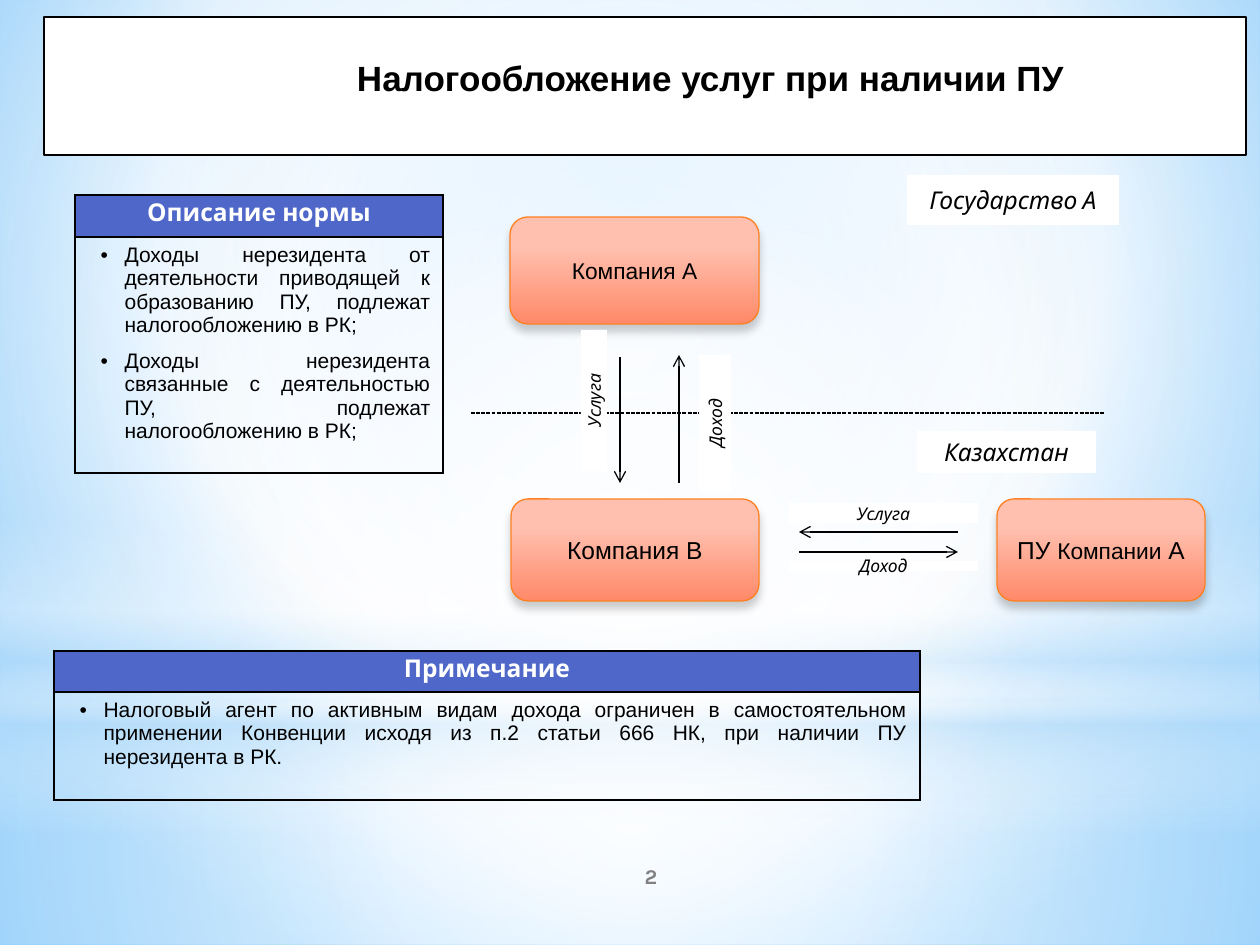
from lxml import etree
from pptx import Presentation
from pptx import util as u
from pptx.dml.color import RGBColor
from pptx.enum import dml, shapes, text
from pptx.oxml.ns import qn

PX = 914400 / 126
BLACK = RGBColor(0x00, 0x00, 0x00)
WHITE = RGBColor(0xFF, 0xFF, 0xFF)
GREY = RGBColor(0x80, 0x80, 0x80)
PALE_BLUE = RGBColor(0xB4, 0xDC, 0xFA)
SKY = RGBColor(0x9E, 0xD5, 0xFF)
DEEP_SKY = RGBColor(0x5B, 0xB9, 0xFF)
HEADER_BLUE = RGBColor(0x4E, 0x67, 0xC8)
PEACH = RGBColor(0xFF, 0xC0, 0xAF)
CORAL = RGBColor(0xFF, 0x89, 0x68)
ORANGE = RGBColor(0xFF, 0x80, 0x21)
RECT = shapes.MSO_SHAPE.RECTANGLE
ROUNDED = shapes.MSO_SHAPE.ROUNDED_RECTANGLE


def px(length):
    """Turn pixels into EMU."""
    return u.Emu(round(length * PX))


def child(parent, tag, **attributes):
    """Append a DrawingML element and return it."""
    return etree.SubElement(parent, qn(f"a:{tag}"), {k: str(v) for k, v in attributes.items()})


def colour(parent, rgb, alpha=100):
    """Append a colour with its opacity in percent."""
    child(child(parent, "srgbClr", val=rgb), "alpha", val=alpha * 1000)


def paint_gradient(fill, owner, stops, focus=None):
    """Fill with a downward gradient, or a circular one around a focus."""
    fill.gradient()
    gradient = next(owner.iter(qn("a:gradFill")))
    gradient.clear()
    stop_list = child(gradient, "gsLst")
    for position, rgb, alpha in stops:
        colour(child(stop_list, "gs", pos=position * 1000), rgb, alpha)
    if focus:
        sides = {side: value * 1000 for side, value in zip("ltrb", focus)}
        child(child(gradient, "path", path="circle"), "fillToRect", **sides)
    else:
        child(gradient, "lin", ang=5400000, scaled=0)


def write(paragraph, words, size=14, font="Karla", color=BLACK, bold=False, italic=False,
          align=text.PP_ALIGN.CENTER):
    """Add formatted words to a paragraph."""
    paragraph.alignment = align
    run = paragraph.add_run()
    run.text = words
    run.font.size, run.font.name = u.Pt(size), font
    run.font.bold, run.font.italic = bold, italic
    run.font.color.rgb = color


def add_box(slide, box, kind=RECT, fill=WHITE, outline=None, width=1.25):
    """Add a flat shape ready for centred text."""
    panel = slide.shapes.add_shape(kind, *map(px, box))
    panel.shadow.inherit = False
    if fill is not None:
        panel.fill.solid()
        panel.fill.fore_color.rgb = fill
    if outline is None:
        panel.line.fill.background()
    else:
        panel.line.color.rgb = outline
        panel.line.width = u.Pt(width)
    panel.text_frame.word_wrap = True
    panel.text_frame.vertical_anchor = text.MSO_ANCHOR.MIDDLE
    return panel


def add_label(slide, box, words, size=14, vertical=False):
    """Add an italic caption on white, optionally reading upwards."""
    label = add_box(slide, box)
    if vertical:
        label.text_frame._txBody.bodyPr.set("vert", "vert270")
    write(label.text_frame.paragraphs[0], words, size=size, italic=True)


def add_company(slide, box, parts):
    """Add a coral company card from (words, size) parts."""
    card = add_box(slide, box, ROUNDED, None, ORANGE, 0.75)
    properties = card.element.spPr
    paint_gradient(card.fill, properties, [(28, PEACH, 100), (100, CORAL, 100)])
    shadow = child(properties.find(qn("a:effectLst")), "outerShdw", blurRad=u.Pt(5),
                   dist=u.Pt(4), dir=5400000, algn="t", rotWithShape=0)
    colour(shadow, BLACK, 20)
    for words, size in parts:
        write(card.text_frame.paragraphs[0], words, size=size, font="Arial")


def add_line(slide, start, end, dashed=False):
    """Add a dashed border line or a solid arrow."""
    line = slide.shapes.add_connector(shapes.MSO_CONNECTOR.STRAIGHT, *map(px, start + end))
    line.line.color.rgb = BLACK
    line.line.width = u.Pt(0.75)
    properties = line.element.spPr
    if dashed:
        line.line.dash_style = dml.MSO_LINE.SQUARE_DOT
    else:
        child(properties.find(qn("a:ln")), "tailEnd", type="arrow")
    child(properties, "effectLst")


def add_backdrop(slide, width, height):
    """Paint the sky gradients over the whole slide."""
    paint_gradient(slide.background.fill, slide.element,
                   [(0, SKY, 100), (60, WHITE, 100), (100, DEEP_SKY, 100)], (20, 10, 20, 60))
    horizon = 703
    centre = (50, 50, 50, 50)
    layers = [
        ((0, horizon, width, height - horizon), RECT,
         [(0, WHITE, 91), (37, WHITE, 76), (100, PALE_BLUE, 79)], centre),
        ((0, 0, width, horizon), RECT,
         [(0, WHITE, 89), (48, WHITE, 62), (100, PALE_BLUE, 79)], centre),
        ((0, 519, width, 315), RECT,
         [(0, WHITE, 0), (29, WHITE, 30), (45, PALE_BLUE, 40), (55, WHITE, 26),
          (65, PALE_BLUE, 60), (100, WHITE, 0)], None),
        ((0, 220, width, horizon), shapes.MSO_SHAPE.OVAL,
         [(0, WHITE, 100), (56, WHITE, 0)], centre),
    ]
    for box, kind, stops, focus in layers:
        layer = add_box(slide, box, kind, None)
        paint_gradient(layer.fill, layer.element.spPr, stops, focus)


def add_title(slide, box, words):
    """Add the framed title banner."""
    left, top, _, _ = box
    add_box(slide, box, outline=BLACK)
    title = add_box(slide, (left + 294, top + 19, 745, 83), ROUNDED, WHITE, WHITE)
    write(title.text_frame.paragraphs[0], words, size=20, font="Arial", bold=True)


def add_page_number(slide, box, number):
    """Add the page number."""
    frame = slide.shapes.add_textbox(*map(px, box)).text_frame
    frame.word_wrap = True
    frame.vertical_anchor = text.MSO_ANCHOR.MIDDLE
    write(frame.paragraphs[0], number, size=12, color=GREY, bold=True)


def add_scheme(slide, left, top):
    """Draw the flow of services and income between the companies."""
    def at(x, y, *size):
        return (left + x, top + y, *size)

    add_label(slide, at(436, 0, 212, 50), "Государство А")
    add_company(slide, at(39, 42, 249, 107), [("Компания А", 13)])
    add_line(slide, at(0, 238), at(634, 238), dashed=True)
    add_label(slide, at(110, 155, 26, 141), "Услуга", 10, vertical=True)
    add_label(slide, at(228, 180, 32, 136), "Доход", 10, vertical=True)
    add_line(slide, at(149, 182), at(149, 308))
    add_line(slide, at(208, 308), at(208, 180))
    add_company(slide, at(40, 324, 248, 102), [("Компания В", 14)])
    add_label(slide, at(446, 256, 179, 42), "Казахстан")
    add_company(slide, at(526, 324, 208, 102), [("ПУ ", 14), ("Компании", 13), (" А", 14)])
    add_label(slide, at(318, 386, 189, 10), "Доход", 10)
    add_label(slide, at(318, 328, 189, 20), "Услуга", 10)
    add_line(slide, at(328, 377), at(487, 377))
    add_line(slide, at(487, 357), at(328, 357))


def style_cell(cell, fill=None):
    """Give a cell thin black borders and an optional fill."""
    properties = cell._tc.get_or_add_tcPr()
    for side in ("lnL", "lnR", "lnT", "lnB"):
        border = child(properties, side, w=u.Pt(1))
        colour(child(border, "solidFill"), BLACK)
    if fill is None:
        cell.fill.background()
    else:
        cell.fill.solid()
        cell.fill.fore_color.rgb = fill


def add_note_table(slide, box, header_height, heading, points):
    """Add a headed table holding justified bullet points."""
    table = slide.shapes.add_table(2, 1, *map(px, box)).table
    table.horz_banding = table.first_row = False
    table.rows[0].height = px(header_height)
    table.rows[1].height = px(box[3] - header_height)
    header, body = table.cell(0, 0), table.cell(1, 0)
    style_cell(header, HEADER_BLUE)
    style_cell(body)
    header.margin_top = header.margin_bottom = px(4)
    write(header.text_frame.paragraphs[0], heading, color=WHITE, bold=True)
    for index, point in enumerate(points):
        paragraph = body.text_frame.add_paragraph() if index else body.text_frame.paragraphs[0]
        properties = paragraph._p.get_or_add_pPr()
        properties.set("marL", str(px(37)))
        properties.set("indent", str(px(-24)))
        child(properties, "buFont", typeface="Arial")
        child(properties, "buChar", char="•")
        child(child(properties, "tabLst"), "tab", pos=px(34), algn="l")
        if index:
            paragraph.space_before = u.Pt(6.8)
        write(paragraph, point, size=12, font="Arial", align=text.PP_ALIGN.JUSTIFY)


def main():
    """Build and save the slide."""
    deck = Presentation()
    deck.slide_width, deck.slide_height = px(1260), px(945)
    slide = deck.slides.add_slide(deck.slide_layouts[6])
    add_backdrop(slide, 1260, 945)
    add_title(slide, (44, 17, 1202, 138), "Налогообложение услуг при наличии ПУ")
    add_page_number(slide, (525, 851, 252, 50), "2")
    add_scheme(slide, 471, 175)
    add_note_table(slide, (75, 195, 368, 278), 42, "Описание нормы", [
        "Доходы нерезидента от деятельности приводящей к образованию ПУ, "
        "подлежат налогообложению в РК;",
        "Доходы нерезидента связанные с деятельностью ПУ, подлежат налогообложению в РК;"])
    add_note_table(slide, (54, 651, 866, 149), 41, "Примечание", [
        "Налоговый агент по активным видам дохода ограничен в самостоятельном применении "
        "Конвенции исходя из п.2 статьи 666 НК, при наличии ПУ нерезидента в РК."])
    deck.save("out.pptx")


if __name__ == "__main__":
    main()
